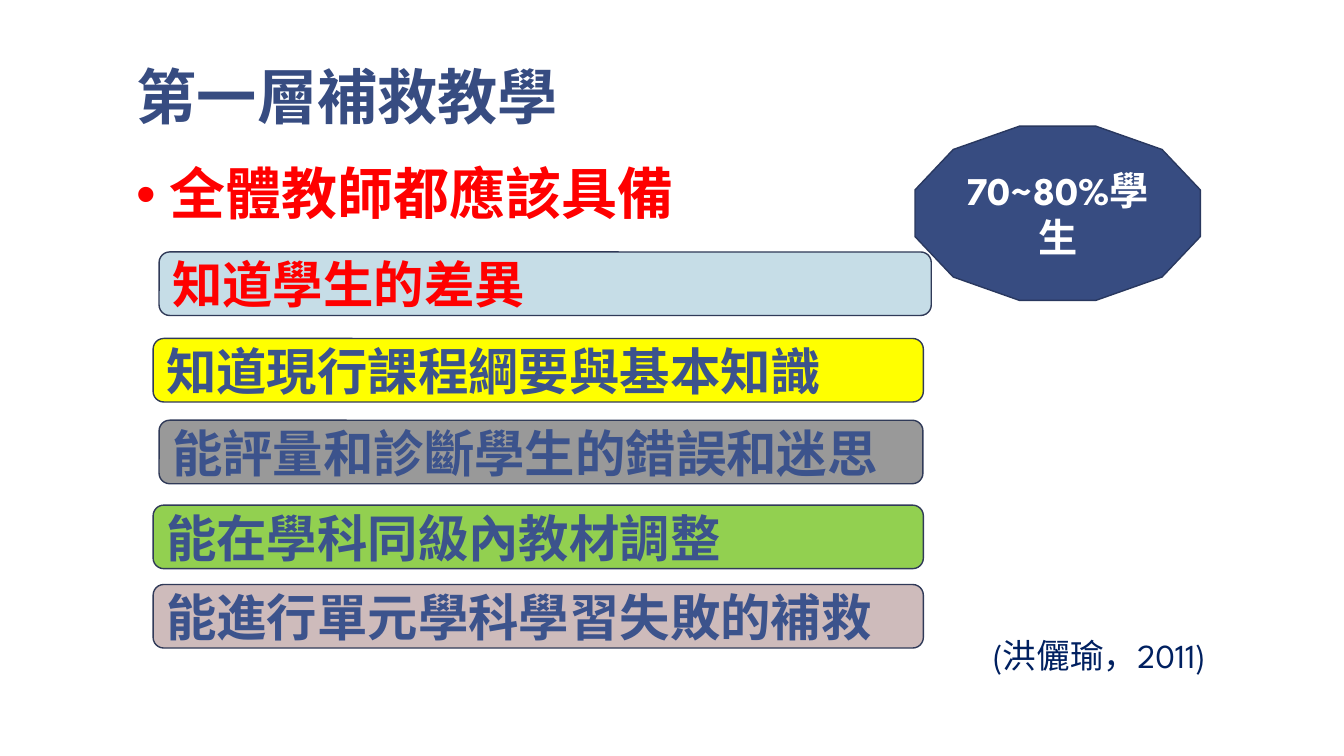
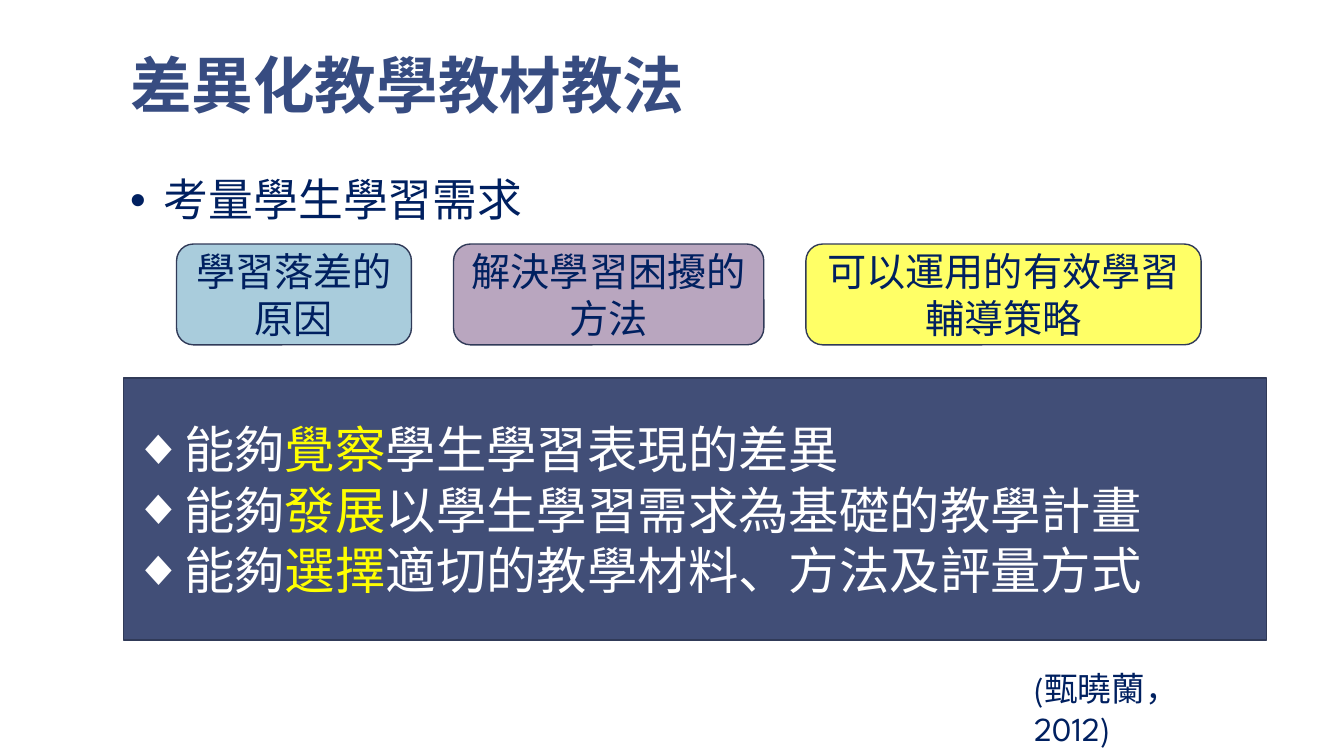
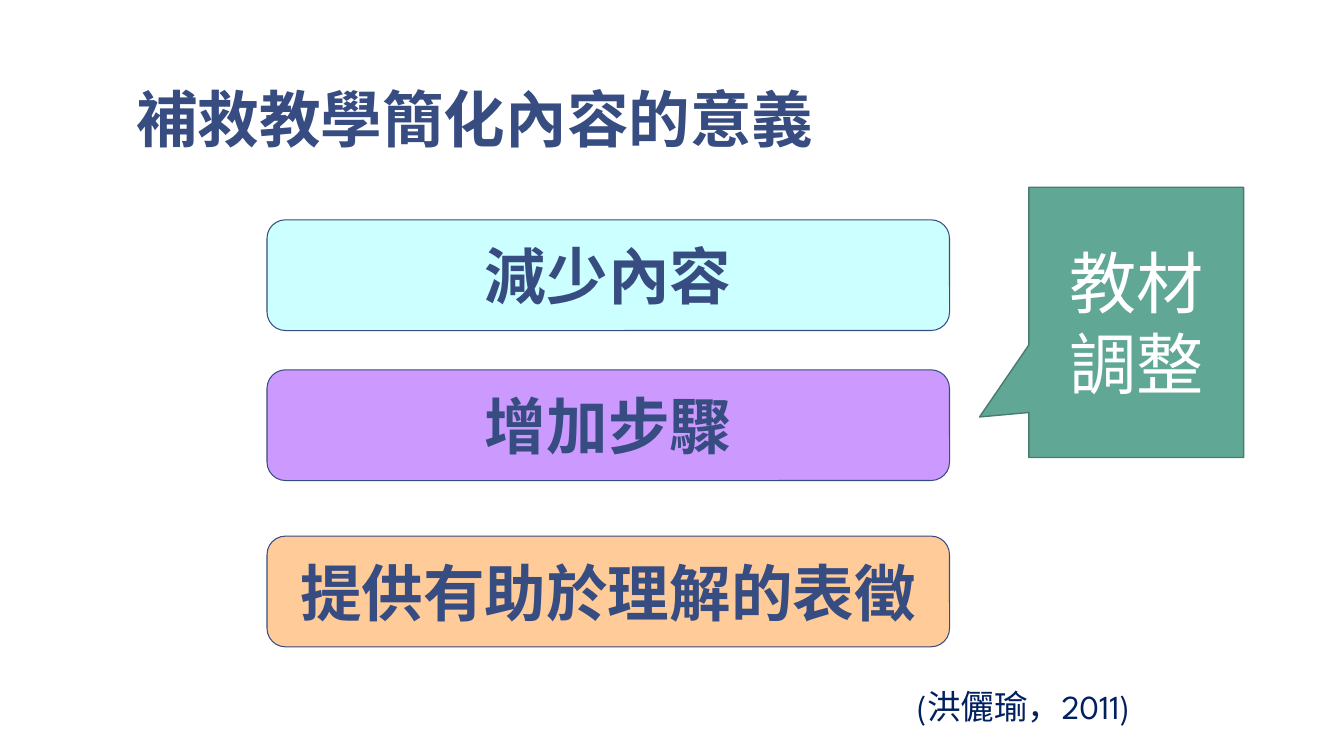
from pptx import Presentation
from pptx.dml.color import RGBColor as Rgb
from pptx.enum.shapes import MSO_SHAPE as Kind
from pptx.enum.text import MSO_ANCHOR as Anchor, PP_ALIGN as Align
from pptx.oxml.ns import qn
from pptx.util import Cm, Pt
from lxml.etree import SubElement as Sub

# Shared style
HUES = {
    "navy": "374C81", "ink": "002060", "blue": "3C538C", "red": "FF0000",
    "white": "FFFFFF", "edge": "303A58", "rim": "29385F", "panel": "414E77",
    "ice": "C6DDE7", "yellow": "FFFF00", "gray": "999999", "lime": "92D050",
    "rose": "CEBBBB", "sky": "A9CCDC", "mauve": "B9A6BF", "lemon": "FFFF66",
    "aqua": "CCFFFF", "violet": "CC99FF", "peach": "FFCC99",
    "teal": "61A796", "moss": "487C6F",
}
SANS, BRAND, CJK = "Arial", "League Spartan", "Noto Sans CJK SC"


def hue(name):
    return Rgb.from_string(HUES[name])


def style(run, size, font, color, bold=False):
    run.font.size = Pt(size)
    run.font.name = font
    run.font.bold = bold
    run.font.color.rgb = hue(color)


def bullet(para, mark, indent):
    props = para._p.get_or_add_pPr()
    props.set("marL", str(Cm(indent)))
    props.set("indent", str(-Cm(indent)))
    Sub(props, qn("a:buFont"), typeface=SANS)
    Sub(props, qn("a:buChar"), char=mark)


# Text boxes
def label(slide, box, text, size, font, color, bold=False):
    frame = slide.shapes.add_textbox(*map(Cm, box)).text_frame
    frame.word_wrap = True
    para = frame.paragraphs[0]
    para.text = text
    style(para.runs[0], size, font, color, bold)
    return frame


def pad(frame):
    frame.margin_left = frame.margin_right = Cm(0.33)
    frame.margin_top = frame.margin_bottom = Cm(0.18)


def title(slide, box, text, size=44):
    frame = label(slide, box, text, size, SANS, "navy", True)
    pad(frame)
    frame.vertical_anchor = Anchor.BOTTOM
    frame.paragraphs[0].line_spacing = 0.85


def point(slide, box, text, size, color, bold=False):
    frame = label(slide, box, text, size, SANS, color, bold)
    pad(frame)
    para = frame.paragraphs[0]
    para.line_spacing = 0.95
    bullet(para, "•", 0.85)


def cite(slide, left, top, text, wrap=False):
    frame = label(slide, (left, top, 6.45, 1.27), text, 24, BRAND, "ink")
    frame.word_wrap = wrap
    if wrap:
        frame.margin_right = Cm(1.2)


# Filled shapes
def block(slide, kind, box, fill, line="edge", width=1):
    shape = slide.shapes.add_shape(kind, *map(Cm, box))
    shape.shadow.inherit = False
    shape.fill.solid()
    shape.fill.fore_color.rgb = hue(fill)
    shape.line.color.rgb = hue(line)
    shape.line.width = Pt(width)
    shape.text_frame.word_wrap = True
    shape.text_frame.vertical_anchor = Anchor.MIDDLE
    return shape


def write(shape, text, size, font, color, bold=False, align=Align.CENTER):
    shape.text_frame.text = text
    for para in shape.text_frame.paragraphs:
        para.alignment = align
        style(para.runs[0], size, font, color, bold)


def panel(slide, box, rows):
    frame = block(slide, Kind.RECTANGLE, box, "panel").text_frame
    for i, row in enumerate(rows):
        para = frame.add_paragraph() if i else frame.paragraphs[0]
        para.alignment = Align.LEFT
        bullet(para, "◆", 1.27)
        for text, color in zip(row, ("white", "yellow", "white")):
            run = para.add_run()
            run.text = text
            style(run, 36, BRAND, color)


# Slides
def tier(slide):
    title(slide, (3.12, 1.32, 14.45, 2.18), "第一層補救教學", 43)
    point(slide, (3.1, 3.94, 28.22, 14), "全體教師都應該具備", 40, "red", True)
    bars = [
        (4.01, 6.35, 19.46, "ice", "red", "知道學生的差異"),
        (3.86, 8.53, 19.41, "yellow", "blue", "知道現行課程綱要與基本知識"),
        (4.01, 10.59, 19.25, "gray", "blue", "能評量和診斷學生的錯誤和迷思"),
        (3.86, 12.73, 19.41, "lime", "blue", "能在學科同級內教材調整"),
        (3.86, 14.73, 19.41, "rose", "blue", "能進行單元學科學習失敗的補救"),
    ]
    for left, top, width, fill, color, text in bars:
        bar = block(slide, Kind.ROUNDED_RECTANGLE, (left, top, width, 1.6), fill)
        write(bar, text, 36, CJK, color, True, Align.LEFT)
    badge = block(slide, Kind.DODECAGON, (23.06, 3.18, 7.19, 4.39), "navy", "rim")
    write(badge, "70~80%學生", 28, BRAND, "white", True)
    cite(slide, 24.77, 15.88, "(洪儷瑜，2011)")


def needs(slide):
    title(slide, (2.95, 0.84, 28.22, 2.39), "差異化教學教材教法")
    point(slide, (2.95, 4.24, 28.22, 12.42), "考量學生學習需求", 32, "ink")
    left, gap = 4.45, 1.06
    for width, fill, text in [
        (5.92, "sky", "學習落差的原因"),
        (7.82, "mauve", "解決學習困擾的方法"),
        (9.96, "lemon", "可以運用的有效學習輔導策略"),
    ]:
        card = block(slide, Kind.ROUNDED_RECTANGLE, (left, 6.15, width, 2.54), fill)
        write(card, text, 28, SANS, "ink")
        left += width + gap
    panel(slide, (3.12, 9.53, 28.8, 6.6), [
        ("能夠", "覺察", "學生學習表現的差異"),
        ("能夠", "發展", "以學生學習需求為基礎的教學計畫"),
        ("能夠", "選擇", "適切的教學材料、方法及評量方式"),
    ])
    cite(slide, 25.81, 16.71, "(甄曉蘭，2012)", wrap=True)


def sense(slide):
    title(slide, (3.1, 1.52, 28.22, 2.57), "補救教學簡化內容的意義")
    for top, fill, text in [
        (5.54, "aqua", "減少內容"),
        (9.32, "violet", "增加步驟"),
        (13.51, "peach", "提供有助於理解的表徵"),
    ]:
        bar = block(slide, Kind.ROUNDED_RECTANGLE, (6.73, top, 17.2, 2.79),
                    fill, "navy", 0.75)
        bar.text_frame.word_wrap = False
        write(bar, text, 44, SANS, "navy", True)
    note = block(slide, Kind.RECTANGULAR_CALLOUT, (25.93, 4.72, 5.41, 6.81),
                 "teal", "moss")
    note.adjustments[0] = -0.73
    note.adjustments[1] = 0.35
    write(note, "教材\n調整", 48, BRAND, "white")
    cite(slide, 22.86, 17.15, "(洪儷瑜，2011)")


def main():
    deck = Presentation()
    deck.slide_width, deck.slide_height = Cm(33.87), Cm(19.05)
    for build in (tier, needs, sense):
        build(deck.slides.add_slide(deck.slide_layouts[6]))
    deck.save("out.pptx")


if __name__ == "__main__":
    main()
